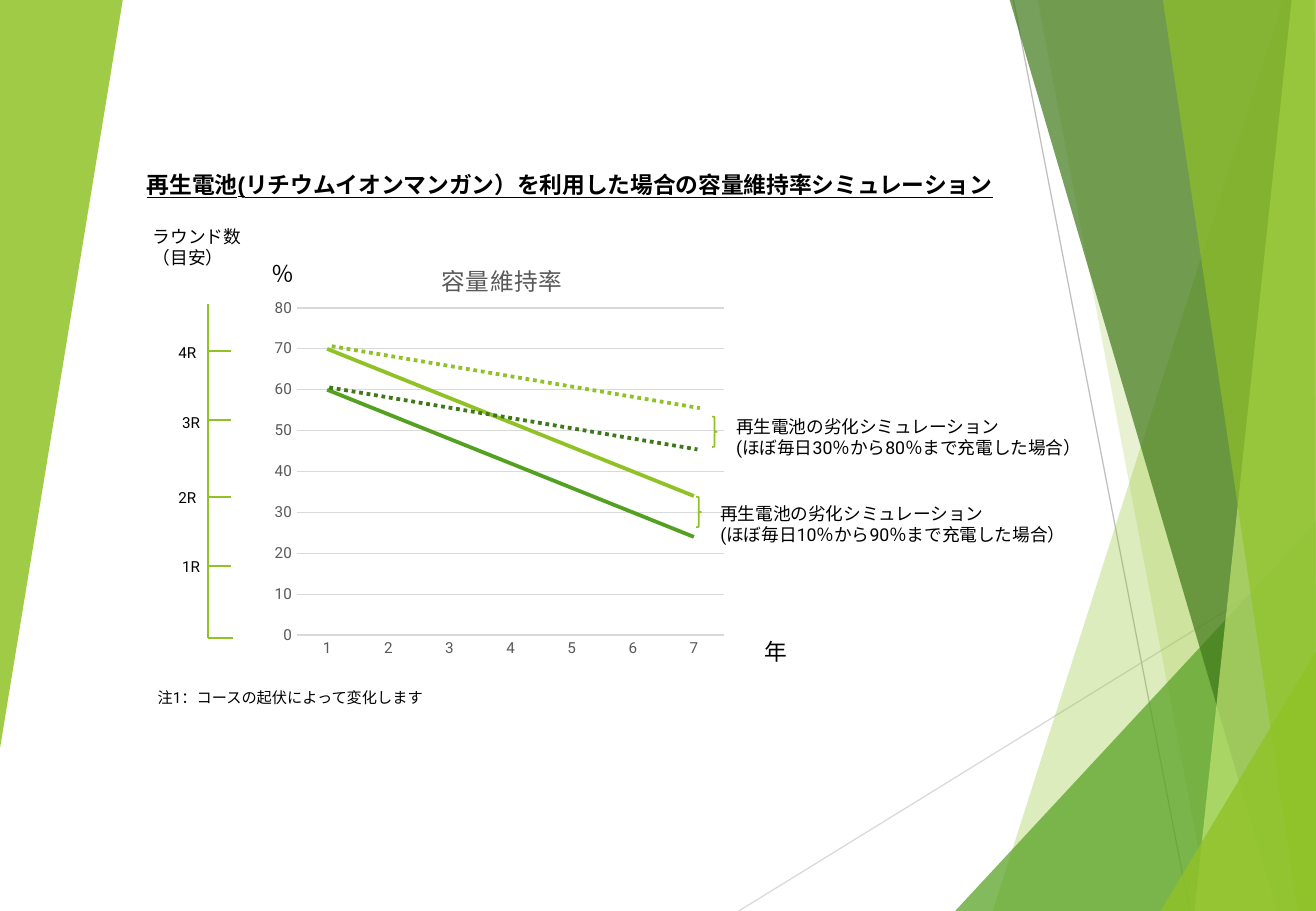
from lxml import etree
from pptx import Presentation
from pptx.chart.data import CategoryChartData
from pptx.dml.color import RGBColor
from pptx.enum.chart import XL_CHART_TYPE as CHART, XL_TICK_MARK as TICK
from pptx.enum.dml import MSO_LINE as DASH
from pptx.enum.shapes import MSO_CONNECTOR as CONN, MSO_SHAPE as SHAPE
from pptx.oxml.ns import qn
from pptx.util import Inches, Pt

C = {"lime": "90C226", "green": "54A021", "dark": "3F7819", "pale": "C0E474",
     "grid": "D9D9D9", "gray": "BFBFBF", "label": "595959", "text": "000000"}
C = {name: RGBColor.from_string(value) for name, value in C.items()}

prs = Presentation()
prs.slide_width, prs.slide_height = Inches(10.83), Inches(7.5)
s = prs.slides.add_slide(prs.slide_layouts[6])


def add_line(x1, y1, x2, y2, color="lime", width=1, dash=None):
    cn = s.shapes.add_connector(CONN.STRAIGHT, *map(Inches, (x1, y1, x2, y2)))
    cn.line.color.rgb = C[color]
    cn.line.width = Pt(width)
    if dash:
        cn.line.dash_style = dash
    etree.SubElement(cn._element.spPr, qn("a:effectLst"))


def set_layout(parent, **box):
    layout = parent.find(qn("c:layout"))
    if layout is None:
        layout = etree.Element(qn("c:layout"))
        parent.insert(0, layout)
    manual = etree.SubElement(layout, qn("c:manualLayout"))
    for tag, val in box.items():
        etree.SubElement(manual, qn("c:" + tag)).set("val", str(val))


add_line(6.08, 7.5, 10.83, 4.57, "grid", 0.75)
add_line(8.34, 0, 9.79, 7.5, "gray", 0.75)

facets = [
    ("lime", 30, [(10.56, 0), (8.17, 7.5), (10.84, 7.5), (10.84, 0)]),
    ("lime", 20, [(8.54, 0), (9.96, 7.5), (10.84, 7.5), (10.84, 0)]),
    ("green", 72, [(7.86, 7.5), (10.84, 4.29), (10.84, 7.5)]),
    ("dark", 70, [(8.31, 0), (10.51, 7.5), (10.84, 7.5), (10.84, 0)]),
    ("pale", 70, [(10.63, 0), (9.83, 7.5), (10.84, 7.5), (10.84, 0)]),
    ("lime", 65, [(9.57, 0), (10.68, 7.5), (10.83, 7.5), (10.82, 0)]),
    ("lime", 80, [(9.55, 7.5), (10.84, 5.35), (10.84, 7.5)]),
    ("lime", 85, [(-0.01, 0), (1.01, 0), (-0.01, 6.22)]),
]
for color, alpha, points in facets:
    points = [(Inches(x), Inches(y)) for x, y in points]
    fb = s.shapes.build_freeform(*points[0])
    fb.add_line_segments(points[1:], close=True)
    sp = fb.convert_to_shape()
    sp.shadow.inherit = False
    sp.line.fill.background()
    sp.fill.solid()
    sp.fill.fore_color.rgb = C[color]
    clr = sp._element.spPr.find(".//" + qn("a:srgbClr"))
    etree.SubElement(clr, qn("a:alpha")).set("val", str(alpha * 1000))

data = CategoryChartData()
data.categories = [str(year) for year in range(1, 8)]
data.add_series("Series 1", range(70, 33, -6))
data.add_series("Series 2", range(60, 23, -6))
chart = s.shapes.add_chart(CHART.LINE, Inches(2.17), Inches(1.89),
                           Inches(3.87), Inches(3.59), data).chart
chart.has_legend = False
chart.font.name, chart.font.size = "Roboto", Pt(10)
chart.has_title = True
p = chart.chart_title.text_frame.paragraphs[0]
r = p.add_run()
r.text = "容量維持率"
for key, val in {"name": "Roboto", "size": Pt(14), "bold": False}.items():
    setattr(r.font, key, val)
r.font.color.rgb = C["label"]
set_layout(chart.chart_title._element, xMode="edge", yMode="edge", x=0.37, y=0.06)
set_layout(chart._chartSpace.find(".//" + qn("c:plotArea")), layoutTarget="inner",
           xMode="edge", yMode="edge", x=0.07, y=0.18, w=0.91, h=0.75)

cat, val_axis = chart.category_axis, chart.value_axis
for axis in (cat, val_axis):
    axis.major_tick_mark = axis.minor_tick_mark = TICK.NONE
    font = axis.tick_labels.font
    font.name, font.size = "Roboto", Pt(9)
    font.color.rgb = C["label"]
val_axis.minimum_scale, val_axis.maximum_scale, val_axis.major_unit = 0, 80, 10
val_axis.format.line.fill.background()
for line in (cat.format.line, val_axis.major_gridlines.format.line):
    line.color.rgb = C["grid"]
    line.width = Pt(0.75)
chart.plots[0].vary_by_categories = False
for series, color in zip(chart.plots[0].series, ("lime", "green")):
    series.smooth = False
    line = series.format.line
    line.color.rgb = C[color]
    line.width = Pt(2.25)

add_line(2.73, 2.85, 5.76, 3.36, "lime", 2.25, DASH.ROUND_DOT)
add_line(2.71, 3.19, 5.74, 3.7, "dark", 2.25, DASH.ROUND_DOT)

add_line(1.71, 2.5, 1.71, 5.25)
add_line(1.71, 5.25, 1.92, 5.25)
for y in (2.89, 3.46, 4.09, 4.66):
    add_line(1.71, y, 1.9, y)

for x, y in ((5.73, 4.09), (5.86, 3.43)):
    sp = s.shapes.add_shape(SHAPE.RIGHT_BRACE, *map(Inches, (x, y, 0.04, 0.25)))
    sp.shadow.inherit = False
    sp.fill.background()
    sp.line.color.rgb = C["lime"]
    sp.line.width = Pt(1)

heading = {"name": "Arial", "bold": True, "underline": True}
body = {"name": "Roboto"}
texts = [
    (1.11, 1.36, 8.11, 0.33, 13.5, heading,
     ["再生電池(リチウムイオンマンガン）を利用した場合の容量維持率シミュレーション"]),
    (1.16, 1.81, 1.14, 0.45, 10.5, body, ["ラウンド数", "（目安）"]),
    (2.14, 2.09, 0.36, 0.33, 13.5, body, ["％"]),
    (6.19, 5.2, 0.36, 0.33, 13.5, body, ["年"]),
    (1.37, 2.78, 0.36, 0.25, 9, body, ["4R"]),
    (1.4, 3.35, 0.36, 0.25, 9, body, ["3R"]),
    (1.37, 3.97, 0.36, 0.25, 9, body, ["2R"]),
    (1.4, 4.54, 0.36, 0.25, 9, body, ["1R"]),
    (5.96, 3.37, 3.09, 0.45, 10.5, body,
     ["再生電池の劣化シミュレーション", "(ほぼ毎日30％から80％まで充電した場合）"]),
    (5.83, 4.09, 3.09, 0.45, 10.5, body,
     ["再生電池の劣化シミュレーション", "(ほぼ毎日10％から90％まで充電した場合）"]),
    (1.2, 5.62, 3.53, 0.25, 9, body, ["注1：コースの起伏によって変化します"]),
]
for x, y, w, h, size, style, lines in texts:
    tf = s.shapes.add_textbox(*map(Inches, (x, y, w, h))).text_frame
    tf.word_wrap = True
    tf.text = "\n".join(lines)
    for p in tf.paragraphs:
        font = p.runs[0].font
        for key, val in style.items():
            setattr(font, key, val)
        font.size = Pt(size)
        font.color.rgb = C["text"]

prs.save("out.pptx")
